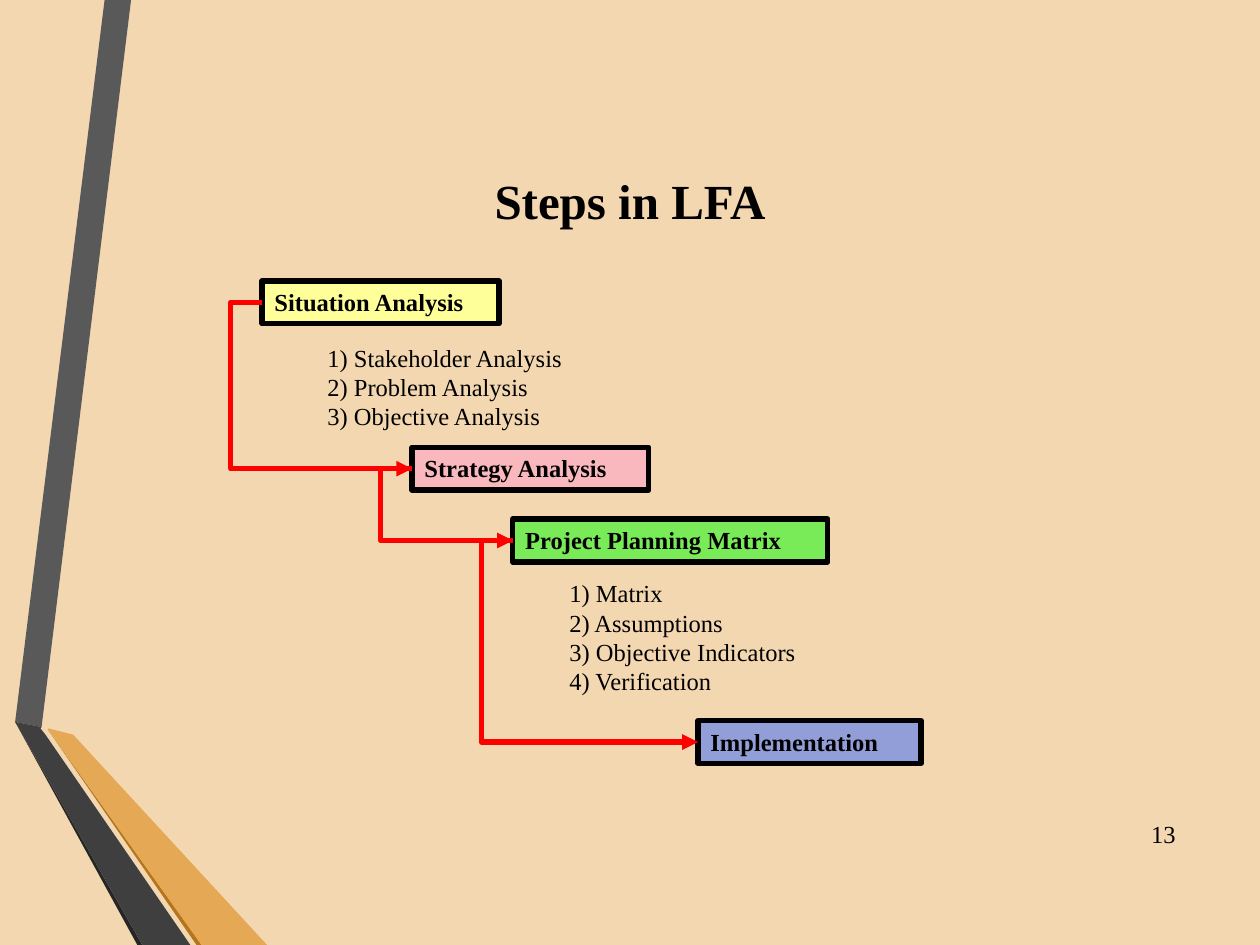
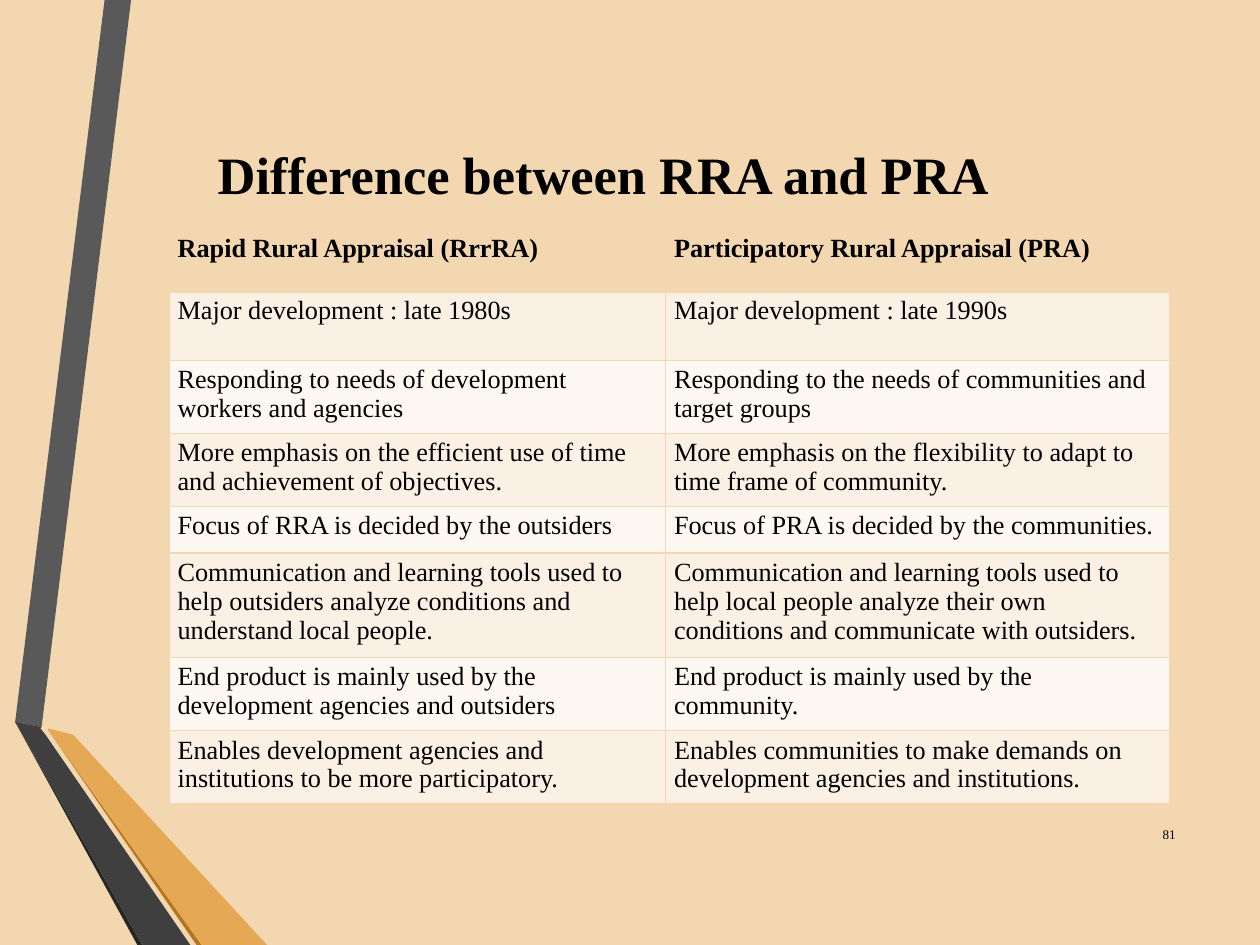
from collections import namedtuple

from lxml import etree
from pptx import Presentation
from pptx.dml.color import RGBColor
from pptx.enum.shapes import MSO_CONNECTOR, MSO_SHAPE
from pptx.enum.text import MSO_ANCHOR, MSO_AUTO_SIZE, PP_ALIGN
from pptx.oxml.ns import qn
from pptx.util import Pt

RECTANGLE = MSO_SHAPE.RECTANGLE
ELBOW = MSO_CONNECTOR.ELBOW
MIDDLE, TOP = MSO_ANCHOR.MIDDLE, MSO_ANCHOR.TOP
GROW, FIXED = MSO_AUTO_SIZE.SHAPE_TO_FIT_TEXT, MSO_AUTO_SIZE.NONE
LEFT, CENTER, RIGHT = PP_ALIGN.LEFT, PP_ALIGN.CENTER, PP_ALIGN.RIGHT

EMU_PER_PX = 9144
FONT = "Times New Roman"
BLACK, RED, SAND = "000000", "FF0000", "F3D7B1"
ROW_FILLS = ["FDF8F2", "FAF0E4"]
LEFT_SITE = 1
ELBOW_REACH = 25

Box = namedtuple("Box", "left top width height")

SLIDE = Box(0, 0, 1000, 750)
NUMBER_BOX = Box(898, 642, 45, 40)

RIBBONS = [
    ("595959", [(104, 0), (83, 0), (12, 573), (33, 577)]),
    ("262626", [(12, 573), (109, 750), (113, 750)]),
    ("B6741B", [(38, 579), (156, 750), (160, 750)]),
    ("E5A855", [(38, 579), (160, 750), (212, 750), (58, 583), (38, 578)]),
    ("3F3F3F", [(151, 750), (36, 583), (32, 578), (33, 577), (12, 573), (113, 750)]),
]

STEPS = [
    ("Situation Analysis", "FFFF99", 100, Box(25, 0, 188, 34)),
    ("Strategy Analysis", "FF99CC", 50, Box(144, 132, 188, 34)),
    ("Project Planning Matrix", "00FF00", 50, Box(224, 189, 250, 34)),
    ("Implementation", "3366FF", 50, Box(371, 349, 177, 34)),
]

DETAILS = [
    (["1) Stakeholder Analysis", "2) Problem Analysis", "3) Objective Analysis"],
     Box(67, 44, 244, 81)),
    (["1) Matrix", "2) Assumptions", "3) Objective Indicators", "4) Verification"],
     Box(259, 231, 250, 104)),
]

COLUMN_WIDTHS = [394, 400]
ROW_HEIGHTS = [49, 55, 57, 57, 37, 82, 57, 57]
COMPARISON = [
    ("Rapid Rural Appraisal (RrrRA)", "Participatory Rural Appraisal (PRA)"),
    ("Major development : late 1980s", "Major development : late 1990s"),
    ("Responding to needs of development workers and agencies",
     "Responding to the needs of communities and target groups"),
    ("More emphasis on the efficient use of time and achievement of objectives.",
     "More emphasis on the flexibility to adapt to time frame of community."),
    ("Focus of RRA is decided by the outsiders",
     "Focus of PRA is decided by the communities."),
    ("Communication and learning tools used to help outsiders analyze conditions "
     "and understand local people.",
     "Communication and learning tools used to help local people analyze their own "
     "conditions and communicate with outsiders."),
    ("End product is mainly used by the development agencies and outsiders",
     "End product is mainly used by the community."),
    ("Enables development agencies and institutions to be more participatory.",
     "Enables communities to make demands on development agencies and institutions."),
]


def px(length):
    return length * EMU_PER_PX


def color(value):
    return RGBColor.from_string(value)


def inside(box, part):
    return Box(box.left + part.left, box.top + part.top, part.width, part.height)


def emu(box):
    return [px(length) for length in box]


def apply(target, values):
    for name, value in values.items():
        setattr(target, name, value)


def paint(fill, value):
    fill.solid()
    fill.fore_color.rgb = color(value)


def write(frame, lines, size, bold=False, align=LEFT):
    for index, line in enumerate(lines):
        paragraph = frame.paragraphs[0] if index == 0 else frame.add_paragraph()
        paragraph.alignment = align
        run = paragraph.add_run()
        run.text = line
        apply(run.font, {"name": FONT, "size": Pt(size), "bold": bold})
        run.font.color.rgb = color(BLACK)


def add_text(slide, box, lines, size, bold=False, align=LEFT, anchor=TOP, fit=FIXED):
    frame = slide.shapes.add_textbox(*emu(box)).text_frame
    apply(frame, {"word_wrap": True, "auto_size": fit, "vertical_anchor": anchor})
    write(frame, lines, size, bold, align)


def add_ribbons(slide):
    group = slide.shapes.add_group_shape()
    for fill, points in RIBBONS:
        builder = group.shapes.build_freeform(*points[0], scale=EMU_PER_PX)
        builder.add_line_segments(points[1:], close=True)
        ribbon = builder.convert_to_shape()
        ribbon.shadow.inherit = False
        paint(ribbon.fill, fill)
        ribbon.line.fill.background()


def add_base_slide(presentation, title, title_box, title_size, number, number_size):
    slide = presentation.slides.add_slide(presentation.slide_layouts[6])
    add_ribbons(slide)
    add_text(slide, title_box, [title], title_size, True, CENTER, MIDDLE)
    add_text(slide, NUMBER_BOX, [number], number_size, False, RIGHT, MIDDLE)
    return slide


def add_step(slide, box, label, fill, opacity):
    step = slide.shapes.add_shape(RECTANGLE, *emu(box))
    step.shadow.inherit = False
    paint(step.fill, fill)
    if opacity < 100:
        tint = step.fill._xPr.find(qn("a:solidFill"))[0]
        etree.SubElement(tint, qn("a:alpha"), val=str(opacity * 1000))
    step.line.color.rgb = color(BLACK)
    step.line.width = Pt(3)
    apply(step.text_frame, {"word_wrap": True, "auto_size": GROW, "vertical_anchor": TOP})
    write(step.text_frame, [label], 14, True)
    return step


def add_step_arrow(slide, source, target):
    arrow = slide.shapes.add_connector(ELBOW, 0, 0, 0, 0)
    arrow.begin_connect(source, LEFT_SITE)
    arrow.end_connect(target, LEFT_SITE)
    arrow.line.color.rgb = color(RED)
    arrow.line.width = Pt(3)
    properties = arrow._element.spPr
    bend = round(-px(ELBOW_REACH) / arrow.width * 100000)
    adjustments = properties.find(qn("a:prstGeom")).get_or_add_avLst()
    etree.SubElement(adjustments, qn("a:gd"), name="adj1", fmla=f"val {bend}")
    etree.SubElement(properties.find(qn("a:ln")), qn("a:tailEnd"), type="triangle")
    etree.SubElement(properties, qn("a:effectLst"))


def add_step_flow(slide, box):
    steps = [add_step(slide, inside(box, part), label, fill, opacity)
             for label, fill, opacity, part in STEPS]
    for lines, part in DETAILS:
        add_text(slide, inside(box, part), lines, 14, fit=GROW)
    for source, target in zip(steps, steps[1:]):
        add_step_arrow(slide, source, target)


def add_borders(cell, widths):
    properties = cell._tc.get_or_add_tcPr()
    for side, width in widths.items():
        line = etree.SubElement(properties, qn(f"a:ln{side}"), w=str(Pt(width)))
        fill = etree.SubElement(line, qn("a:solidFill"))
        etree.SubElement(fill, qn("a:srgbClr"), val=SAND)


def add_comparison(slide, box):
    table = slide.shapes.add_table(len(COMPARISON), len(COLUMN_WIDTHS), *emu(box)).table
    for column, width in zip(table.columns, COLUMN_WIDTHS):
        column.width = px(width)
    for row, height in zip(table.rows, ROW_HEIGHTS):
        row.height = px(height)
    for row_index, texts in enumerate(COMPARISON):
        header = row_index == 0
        widths = {"L": 1, "R": 1, "T": 3 if row_index == 1 else 1, "B": 3 if header else 1}
        for column_index, text in enumerate(texts):
            cell = table.cell(row_index, column_index)
            apply(cell, {"margin_left": px(7), "margin_right": px(7),
                         "margin_top": px(4), "margin_bottom": px(4)})
            add_borders(cell, widths)
            paint(cell.fill, SAND if header else ROW_FILLS[row_index % 2])
            write(cell.text_frame, [text], 15, header)


def main():
    presentation = Presentation()
    apply(presentation, {"slide_width": px(SLIDE.width), "slide_height": px(SLIDE.height)})
    paint(presentation.slide_master.background.fill, SAND)

    steps_slide = add_base_slide(
        presentation, "Steps in LFA", Box(69, 110, 862, 97), 28, "13", 14)
    add_step_flow(steps_slide, Box(183, 223, 548, 383))

    comparison_slide = add_base_slide(
        presentation, "Difference between RRA and PRA", Box(48, 94, 862, 88), 30, "81", 7.5)
    add_comparison(comparison_slide, Box(134, 182, sum(COLUMN_WIDTHS), sum(ROW_HEIGHTS)))

    presentation.save("out.pptx")


if __name__ == "__main__":
    main()
